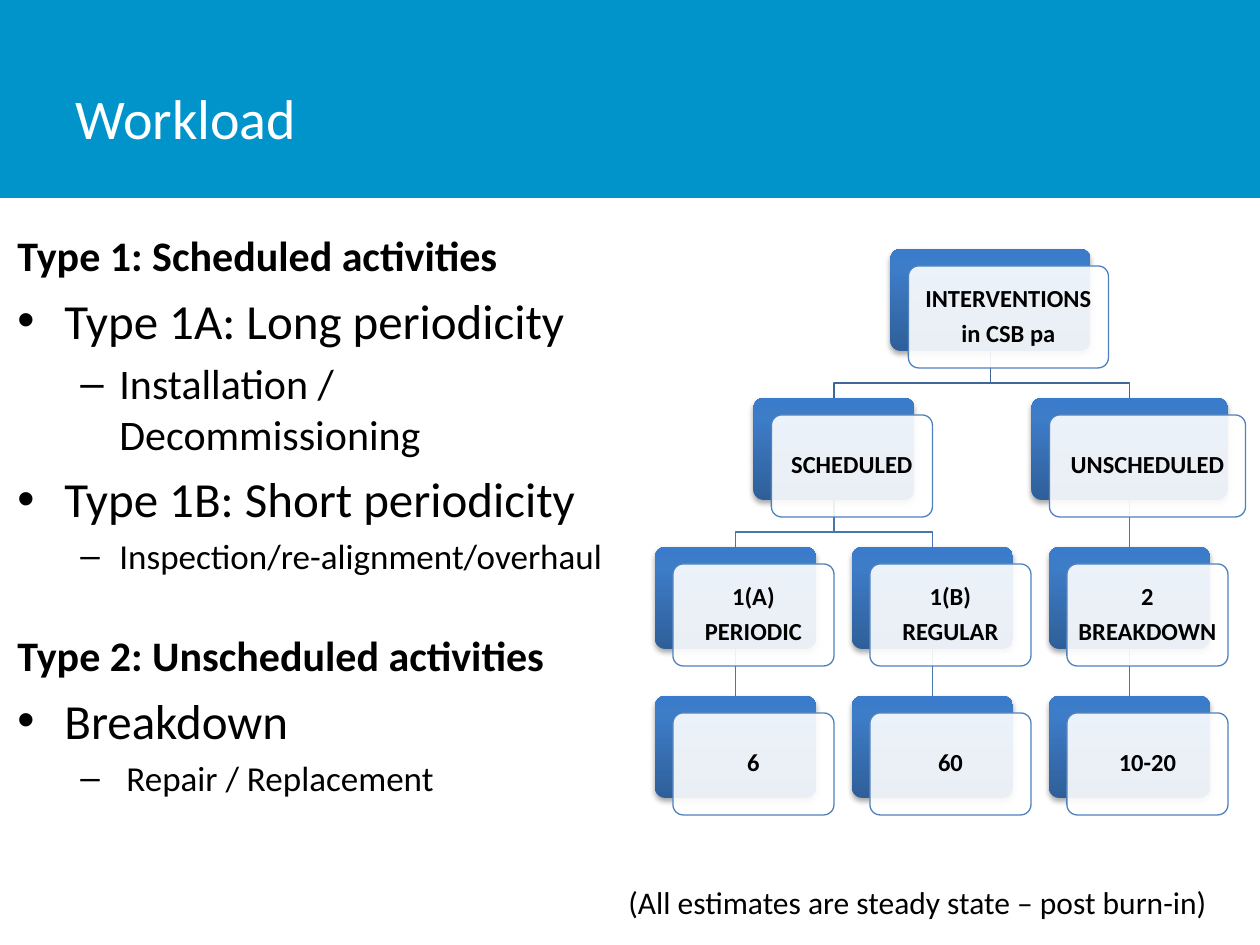
"""Build the Workload slide: activity types beside a tree of interventions."""
from copy import deepcopy

from lxml import etree
from pptx import Presentation
from pptx.dml.color import RGBColor
from pptx.enum.shapes import MSO_CONNECTOR, MSO_SHAPE
from pptx.enum.text import MSO_ANCHOR, MSO_AUTO_SIZE, PP_ALIGN
from pptx.oxml.ns import qn
from pptx.util import Emu, Pt

RECT, ROUNDED = MSO_SHAPE.RECTANGLE, MSO_SHAPE.ROUNDED_RECTANGLE
STRAIGHT = MSO_CONNECTOR.STRAIGHT
MIDDLE, TOP = MSO_ANCHOR.MIDDLE, MSO_ANCHOR.TOP
LEFT, CENTER = PP_ALIGN.LEFT, PP_ALIGN.CENTER
FIT_SHAPE, NO_FIT = MSO_AUTO_SIZE.SHAPE_TO_FIT_TEXT, MSO_AUTO_SIZE.NONE

WHITE = RGBColor(0xFF, 0xFF, 0xFF)
BLACK = RGBColor(0x00, 0x00, 0x00)
BANNER = RGBColor(0x00, 0x94, 0xCA)
OUTLINE = RGBColor(0x4F, 0x81, 0xBD)
ROOT_LINK = RGBColor(0x3F, 0x67, 0x97)
LINK = RGBColor(0x48, 0x75, 0xAC)
CARD_STOPS = [(0, RGBColor(0x2F, 0x5F, 0x99)), (0.8, RGBColor(0x3D, 0x7C, 0xC7)),
              (1, RGBColor(0x3A, 0x7C, 0xCB))]

FONT = "Calibri"
PX = 914400 / 126

TITLE = "Workload"
FOOTNOTE = "(All estimates are steady state – post burn-in)"

HEADING = {"bullet": None, "margin": 0, "hang": 0, "bold": True}
ITEM = {"bullet": "•", "margin": 47, "hang": 47, "bold": False}
DETAIL = {"bullet": "–", "margin": 102, "hang": 39, "bold": False}
INSET_DETAIL = {**DETAIL, "margin": 109, "hang": 46}
ACTIVITIES = [
    ("Type 1: Scheduled activities", HEADING, 24, 5),
    ("Type 1A: Long periodicity", ITEM, 28, 6),
    ("Installation / Decommissioning", DETAIL, 24, 5),
    ("Type 1B: Short periodicity", ITEM, 28, 6),
    ("Inspection/re-alignment/overhaul", DETAIL, 20, 4),
    ("Type 2: Unscheduled activities", HEADING, 24, 30),
    ("Breakdown", ITEM, 28, 6),
    ("Repair / Replacement", INSET_DETAIL, 20, 4),
]

CARD_W, CARD_H = 161, 102
INTERVENTIONS = (["INTERVENTIONS", "in CSB pa"], 200, [
    (["SCHEDULED"], CARD_W, [
        (["1(A)", "PERIODIC"], CARD_W, [(["6"], CARD_W, [])]),
        (["1(B)", "REGULAR"], CARD_W, [(["60"], CARD_W, [])]),
    ]),
    (["UNSCHEDULED"], 196, [
        (["2", "BREAKDOWN"], CARD_W, [(["10-20"], CARD_W, [])]),
    ]),
])
TREE_LEFT, TREE_TOP = 655, 249
COLUMN_STEP, ROW_STEP = 197, 149
FRONT_DX, FRONT_DY = 18, 17
ELBOW_DROP = 32


def px(*lengths):
    return [Emu(round(length * PX)) for length in lengths]


def apply_format(target, values):
    for key, value in values.items():
        setattr(target, key, value)


def format_font(font, size, color, bold=False):
    apply_format(font, {"name": FONT, "size": Pt(size), "bold": bold})
    font.color.rgb = color


def add_paragraphs(frame, texts):
    for index, text in enumerate(texts):
        paragraph = frame.paragraphs[0] if index == 0 else frame.add_paragraph()
        paragraph.text = text
        yield paragraph


def add_block(slide, kind, box, color=None):
    block = slide.shapes.add_shape(kind, *px(*box))
    block.shadow.inherit = False
    block.line.fill.background()
    if color is not None:
        block.fill.solid()
        block.fill.fore_color.rgb = color
    return block


def add_title(slide):
    banner = add_block(slide, RECT, (0, 0, 1260, 198), BANNER)
    slide.shapes[0]._element.addprevious(banner._element)
    title = slide.shapes.title
    apply_format(title, dict(zip(("left", "top", "width", "height"), px(63, 38, 984, 158))))
    title.text_frame.text = TITLE
    title.text_frame.vertical_anchor = MIDDLE
    paragraph = title.text_frame.paragraphs[0]
    paragraph.alignment = LEFT
    format_font(paragraph.runs[0].font, 32, WHITE)


def add_activities(slide):
    frame = slide.shapes.add_textbox(*px(5, 223, 646, 653)).text_frame
    apply_format(frame, {"word_wrap": True, "auto_size": NO_FIT, "vertical_anchor": TOP})
    paragraphs = add_paragraphs(frame, [activity[0] for activity in ACTIVITIES])
    for paragraph, (_, style, size, gap) in zip(paragraphs, ACTIVITIES):
        paragraph.space_before = Pt(gap)
        format_font(paragraph.runs[0].font, size, BLACK, style["bold"])
        if style["bullet"]:
            properties = paragraph._p.get_or_add_pPr()
            margin, hang = px(style["margin"], style["hang"])
            properties.set("marL", str(margin))
            properties.set("indent", str(-hang))
            etree.SubElement(properties, qn("a:buFont"), typeface="Arial")
            etree.SubElement(properties, qn("a:buChar"), char=style["bullet"])


def place(node, depth, next_column):
    """Return the placed node and the next free leaf column."""
    lines, width, children = node
    placed = []
    for child in children:
        child_node, next_column = place(child, depth + 1, next_column)
        placed.append(child_node)
    if placed:
        center = (placed[0]["left"] + placed[-1]["left"] + placed[-1]["width"]) / 2
    else:
        center = TREE_LEFT + next_column * COLUMN_STEP + CARD_W / 2
        next_column += 1
    return {"lines": lines, "left": center - width / 2, "width": width, "center": center,
            "top": TREE_TOP + depth * ROW_STEP, "children": placed}, next_column


def add_link(slide, parent, child, color):
    start, end = parent["center"], child["center"]
    bottom = parent["top"] + CARD_H
    if start == end:
        link = slide.shapes.add_connector(STRAIGHT, *px(start, bottom, end, child["top"]))
        etree.SubElement(link._element.spPr, qn("a:effectLst"))
    else:
        elbow = bottom + ELBOW_DROP
        builder = slide.shapes.build_freeform(*px(start, bottom))
        corners = [(start, elbow), (end, elbow), (end, child["top"])]
        builder.add_line_segments([px(*corner) for corner in corners], close=False)
        link = builder.convert_to_shape()
        link.fill.background()
        link.shadow.inherit = False
    link.line.color.rgb = color
    link.line.width = Pt(0.75)


def add_links(slide, node, color):
    for child in node["children"]:
        add_links(slide, child, LINK)
        add_link(slide, node, child, color)


def add_cards(slide, node):
    left, top, width = node["left"], node["top"], node["width"]
    back = add_block(slide, ROUNDED, (left, top, width, CARD_H))
    back.fill.gradient()
    back.fill.gradient_angle = 90
    stops = back._element.spPr.find(".//" + qn("a:gsLst"))
    stops.append(deepcopy(stops[-1]))
    for stop, (position, color) in zip(back.fill.gradient_stops, CARD_STOPS):
        stop.position = position
        stop.color.rgb = color
    effects = back._element.spPr.find(qn("a:effectLst"))
    shadow = etree.SubElement(effects, qn("a:outerShdw"), blurRad="40000", dist="23000",
                              dir="5400000", rotWithShape="0")
    shade = etree.SubElement(shadow, qn("a:srgbClr"), val=str(BLACK))
    etree.SubElement(shade, qn("a:alpha"), val="35000")

    front = add_block(slide, ROUNDED, (left + FRONT_DX, top + FRONT_DY, width, CARD_H), WHITE)
    tint = front._element.spPr.find(qn("a:solidFill"))[0]
    etree.SubElement(tint, qn("a:alpha"), val="90000")
    front.line.color.rgb = OUTLINE
    front.line.width = Pt(0.75)
    back.adjustments[0] = front.adjustments[0] = 0.1
    frame = front.text_frame
    inset, = px(7)
    apply_format(frame, {"word_wrap": True, "vertical_anchor": MIDDLE, "margin_left": inset,
                         "margin_right": inset, "margin_top": inset, "margin_bottom": inset})
    for paragraph in add_paragraphs(frame, node["lines"]):
        apply_format(paragraph, {"alignment": CENTER, "line_spacing": 0.9,
                                 "space_after": Pt(5)})
        format_font(paragraph.runs[0].font, 14, BLACK, True)
    for child in node["children"]:
        add_cards(slide, child)


def add_footnote(slide):
    frame = slide.shapes.add_textbox(*px(616, 877, 613, 50)).text_frame
    apply_format(frame, {"text": FOOTNOTE, "word_wrap": False, "auto_size": FIT_SHAPE})
    format_font(frame.paragraphs[0].runs[0].font, 18, BLACK)


def main():
    deck = Presentation()
    deck.slide_width, deck.slide_height = px(1260, 945)
    slide = deck.slides.add_slide(deck.slide_layouts.get_by_name("Title Only"))
    add_title(slide)
    add_activities(slide)
    root, _ = place(INTERVENTIONS, 0, 0)
    add_links(slide, root, ROOT_LINK)
    add_cards(slide, root)
    add_footnote(slide)
    deck.save("out.pptx")


if __name__ == "__main__":
    main()
